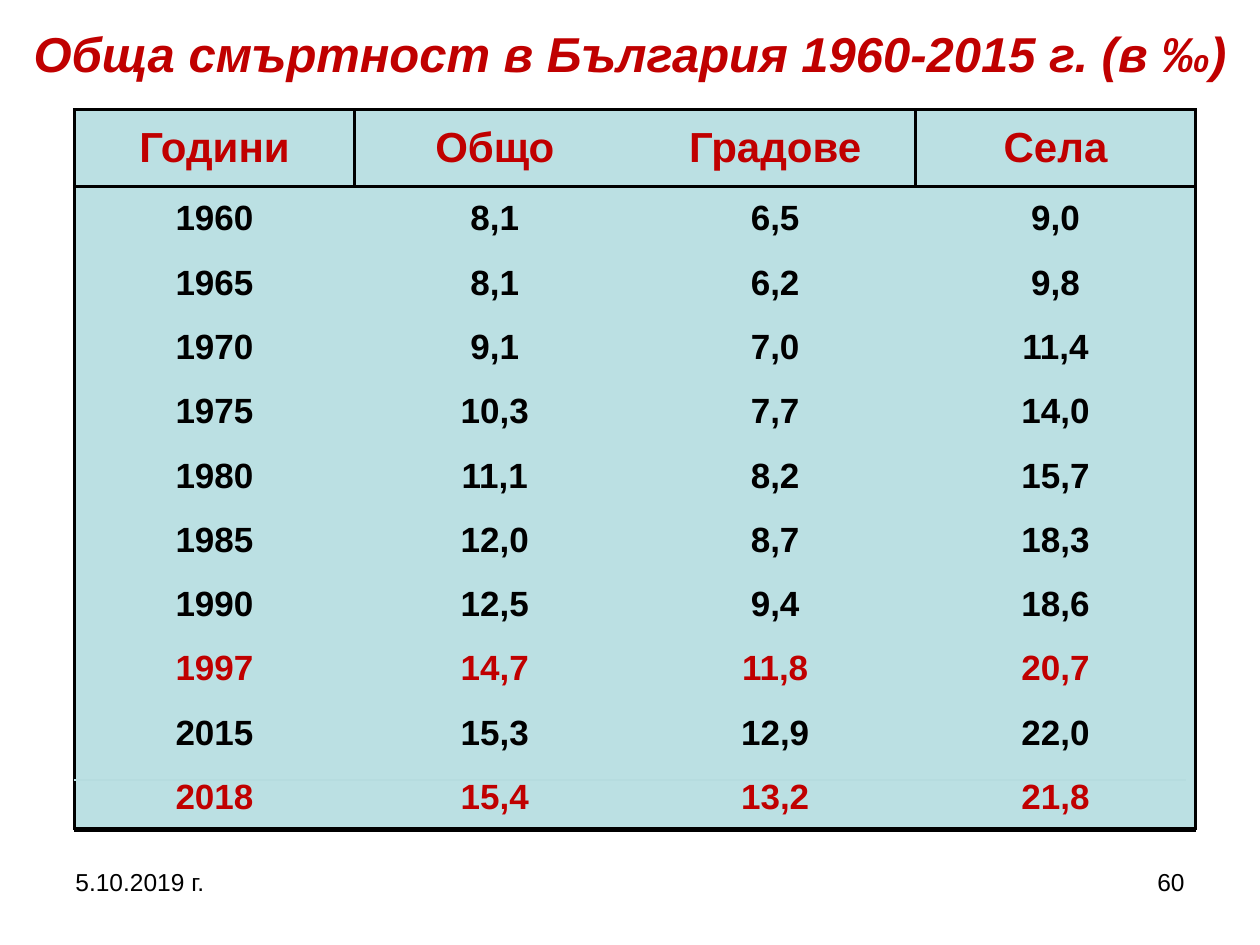
from lxml import etree
from pptx import Presentation
from pptx.dml.color import RGBColor
from pptx.enum.shapes import MSO_CONNECTOR
from pptx.enum.text import MSO_ANCHOR, PP_ALIGN
from pptx.oxml.ns import qn
from pptx.util import Pt

STRAIGHT = MSO_CONNECTOR.STRAIGHT
MIDDLE = MSO_ANCHOR.MIDDLE
LEFT, CENTER, RIGHT = PP_ALIGN.LEFT, PP_ALIGN.CENTER, PP_ALIGN.RIGHT
RED, BLACK, TEAL, PALE_TEAL = "C00000", "000000", "BBE0E3", "B6DCDF"

ROWS = [
    ("Години", "Общо", "Градове", "Села"),
    ("1960", "8,1", "6,5", "9,0"),
    ("1965", "8,1", "6,2", "9,8"),
    ("1970", "9,1", "7,0", "11,4"),
    ("1975", "10,3", "7,7", "14,0"),
    ("1980", "11,1", "8,2", "15,7"),
    ("1985", "12,0", "8,7", "18,3"),
    ("1990", "12,5", "9,4", "18,6"),
    ("1997", "14,7", "11,8", "20,7"),
    ("2015", "15,3", "12,9", "22,0"),
    ("2018", "15,4", "13,2", "21,8"),
]
RED_ROWS = ("Години", "1997", "2018")
TABLE_LEFT, TABLE_TOP = 42.5, 62.64
COLUMN_WIDTH, HEADER_HEIGHT, ROW_HEIGHT = 160.2, 44, 36.75


def rgb(value):
    return RGBColor.from_string(value)


def write(frame, text, size, color, align, bold=False, italic=False):
    frame.text = text
    para = frame.paragraphs[0]
    para.alignment = align
    font = para.runs[0].font
    font.name, font.size, font.bold, font.italic = "Arial", Pt(size), bold, italic
    font.color.rgb = rgb(color)


deck = Presentation()
deck.slide_width, deck.slide_height = Pt(720), Pt(540)
page = deck.slides.add_slide(deck.slide_layouts[5])
page.background.fill.solid()
page.background.fill.fore_color.rgb = rgb("FFFFFF")

# Title
title = page.shapes.title
title.left, title.top, title.width, title.height = Pt(0), Pt(9.5), Pt(720), Pt(41)
write(title.text_frame, "Обща смъртност в България 1960-2015 г. (в ‰)", 28, RED, CENTER, True, True)
title.text_frame.vertical_anchor = MIDDLE

# Mortality table
table_height = HEADER_HEIGHT + ROW_HEIGHT * (len(ROWS) - 1)
table = page.shapes.add_table(
    len(ROWS), 4, Pt(TABLE_LEFT), Pt(TABLE_TOP), Pt(4 * COLUMN_WIDTH), Pt(table_height)
).table
table.horz_banding = False
for column in table.columns:
    column.width = Pt(COLUMN_WIDTH)

for r, values in enumerate(ROWS):
    table.rows[r].height = Pt(ROW_HEIGHT if r else HEADER_HEIGHT)
    color = RED if values[0] in RED_ROWS else BLACK
    for c, value in enumerate(values):
        cell = table.cell(r, c)
        write(cell.text_frame, value, 20 if r else 24, color, CENTER, True)
        cell.vertical_anchor = MIDDLE

        # Outer frame, header box and two header dividers
        edges = {
            "a:lnL": c == 0 or (r == 0 and c in (1, 3)),
            "a:lnR": c == 3 or (r == 0 and c in (0, 2)),
            "a:lnT": r <= 1,
            "a:lnB": r == 0,
        }
        properties = cell._tc.get_or_add_tcPr()
        for tag, visible in edges.items():
            edge = etree.SubElement(properties, qn(tag), w=str(Pt(2)))
            if visible:
                fill = etree.SubElement(edge, qn("a:solidFill"))
                etree.SubElement(fill, qn("a:srgbClr"), val=BLACK)
            else:
                etree.SubElement(edge, qn("a:noFill"))
        cell.fill.solid()
        cell.fill.fore_color.rgb = rgb(TEAL)

# Date and page number
for left, text, align in ((36, "5.10.2019 г.", LEFT), (516, "60", RIGHT)):
    box = page.shapes.add_textbox(Pt(left), Pt(491.75), Pt(168), Pt(37.5))
    box.text_frame.word_wrap = True
    write(box.text_frame, text, 14, BLACK, align)

# Rules above and below the last row
for right, y, color, width in ((677.5, 445.7, PALE_TEAL, 0.75), (683.3, 474, BLACK, 3)):
    rule = page.shapes.add_connector(STRAIGHT, Pt(TABLE_LEFT), Pt(y), Pt(right), Pt(y))
    rule.line.color.rgb = rgb(color)
    rule.line.width = Pt(width)
    etree.SubElement(rule._element.spPr, qn("a:effectLst"))

deck.save("out.pptx")
